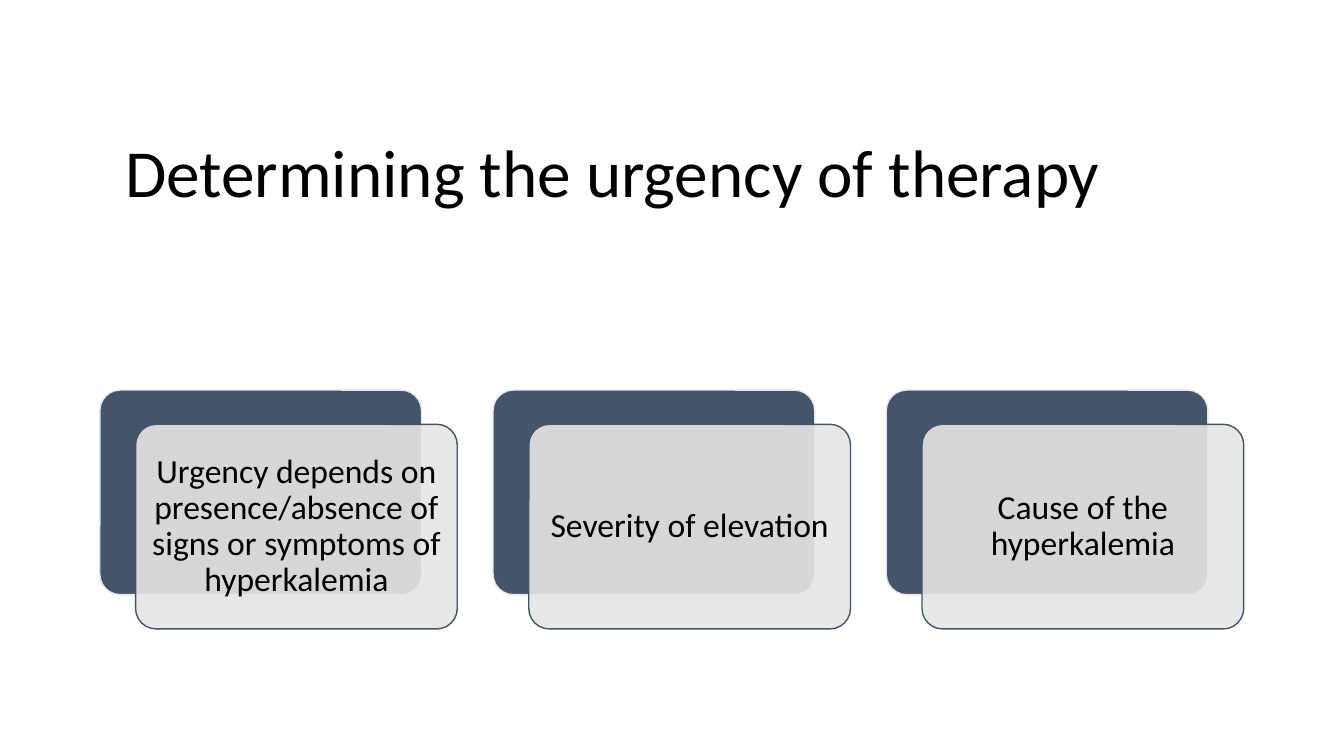
from lxml import etree
from pptx import Presentation
from pptx.dml.color import RGBColor
from pptx.enum.shapes import MSO_SHAPE
from pptx.enum.text import MSO_ANCHOR, PP_ALIGN
from pptx.oxml.ns import qn
from pptx.util import Inches, Pt

ROUND = MSO_SHAPE.ROUNDED_RECTANGLE
MIDDLE = MSO_ANCHOR.MIDDLE
LEFT, CENTER = PP_ALIGN.LEFT, PP_ALIGN.CENTER

COLORS = {"slate": "44546A", "pale": "E7E6E6", "text": "000000"}
FONT = "Calibri"

# Card grid, in inches
START, TOP, PITCH = 0.99, 3.87, 3.9
WIDTH, HEIGHT = 3.19, 2.03
SHIFT_X, SHIFT_Y = 0.355, 0.34
INSET = 0.09

TITLE = "Determining the urgency of therapy"
FACTORS = [
    "Urgency depends on presence/absence of signs or symptoms of hyperkalemia",
    "Severity of elevation",
    "Cause of the hyperkalemia",
]


def color(name):
    return RGBColor.from_string(COLORS[name])


def write(frame, text, size, align):
    frame.text = text
    frame.word_wrap = True
    frame.vertical_anchor = MIDDLE
    para = frame.paragraphs[0]
    para.alignment = align
    para.line_spacing = 0.9
    para.font.name = FONT
    para.font.size = Pt(size)
    para.font.color.rgb = color("text")


def add_title(slide):
    title = slide.shapes.title
    title.left, title.top = Inches(1.14), Inches(0.89)
    title.width, title.height = Inches(11.13), Inches(1.7)
    write(title.text_frame, TITLE, 48, LEFT)


def add_panel(slide, x, y, fill, line):
    panel = slide.shapes.add_shape(
        ROUND, Inches(x), Inches(y), Inches(WIDTH), Inches(HEIGHT))
    panel.adjustments[0] = 0.1
    panel.shadow.inherit = False
    panel.fill.solid()
    panel.fill.fore_color.rgb = color(fill)
    panel.line.color.rgb = color(line)
    panel.line.width = Pt(1)
    return panel


def set_alpha(shape, percent):
    tint = shape.fill._xPr.find(qn("a:solidFill"))[0]
    etree.SubElement(tint, qn("a:alpha"), val=str(percent * 1000))


def add_card(slide, x, text):
    # Dark panel behind, translucent panel with the text in front
    add_panel(slide, x, TOP, "slate", "pale")
    front = add_panel(slide, x + SHIFT_X, TOP + SHIFT_Y, "pale", "slate")
    set_alpha(front, 90)
    frame = front.text_frame
    frame.margin_left = frame.margin_right = Inches(INSET)
    frame.margin_top = frame.margin_bottom = Inches(INSET)
    write(frame, text, 24, CENTER)


def main():
    deck = Presentation()
    deck.slide_width, deck.slide_height = Inches(13.33), Inches(7.5)
    slide = deck.slides.add_slide(deck.slide_layouts[5])
    add_title(slide)
    for col, text in enumerate(FACTORS):
        add_card(slide, START + col * PITCH, text)
    deck.save("out.pptx")


if __name__ == "__main__":
    main()
